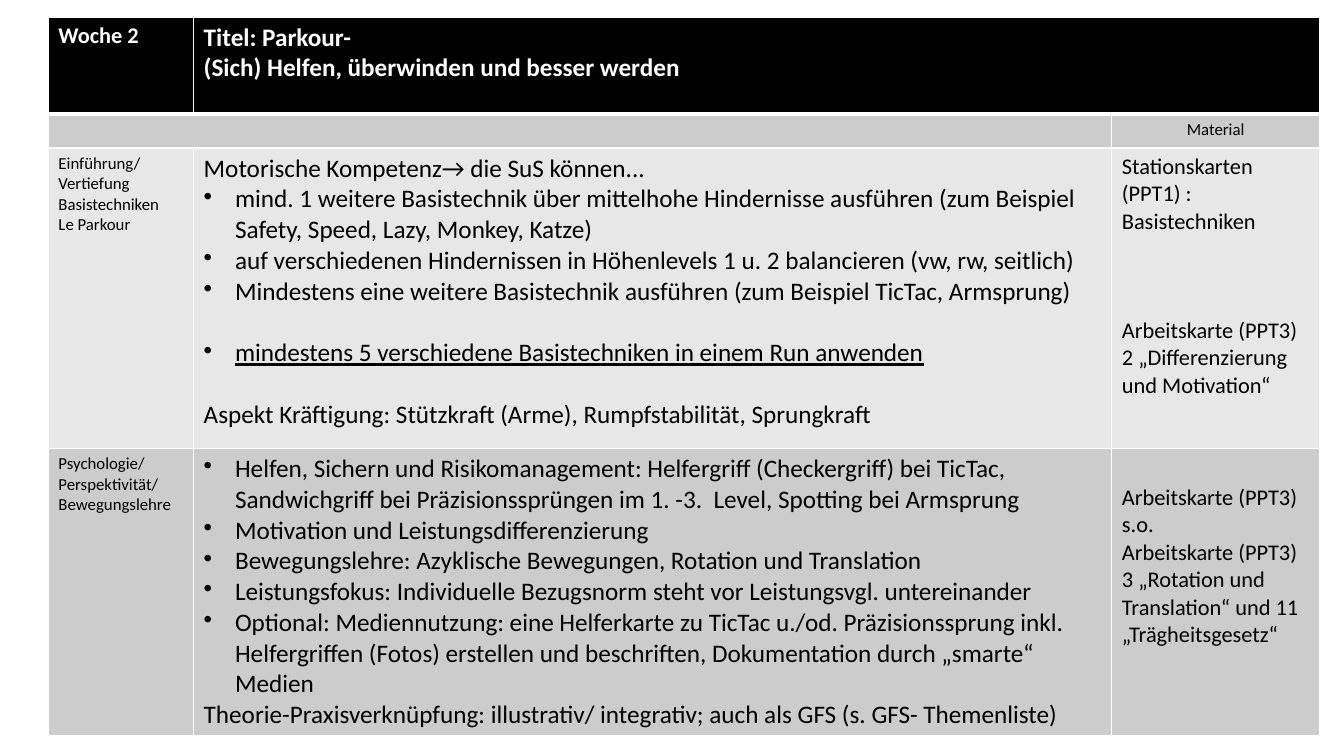
from lxml.etree import SubElement
from pptx import Presentation
from pptx.dml.color import RGBColor
from pptx.enum.text import PP_ALIGN
from pptx.oxml.ns import qn
from pptx.util import Cm, Pt

COLORS = {"black": "000000", "white": "FFFFFF", "dark": "CCCCCC", "light": "E7E7E7"}
FONT = "Calibri"
BULLET_INDENT = Cm(0.79)
COLUMN_WIDTHS = [3.66, 23.14, 5.23]
ROW_HEIGHTS = [2.44, 0.86, 7.57, 7.21]
# Heights of one line of text, in points
LINE_18, LINE_16 = 22, 19.5


class Line:
    """One paragraph of a cell."""

    def __init__(self, text, bullet=False, underline=False, gap=0):
        self.text, self.bullet, self.underline, self.gap = text, bullet, underline, gap


def bullets(*texts):
    return [Line(text, bullet=True) for text in texts]


class PlanSlide:
    def __init__(self, presentation):
        self.slide = presentation.slides.add_slide(presentation.slide_layouts[6])

    def add_table(self, left, top):
        frame = self.slide.shapes.add_table(
            len(ROW_HEIGHTS), len(COLUMN_WIDTHS), Cm(left), Cm(top),
            Cm(sum(COLUMN_WIDTHS)), Cm(sum(ROW_HEIGHTS)))
        self.table = frame.table
        self.table.horz_banding = False
        for column, width in zip(self.table.columns, COLUMN_WIDTHS):
            column.width = Cm(width)
        for row, height in zip(self.table.rows, ROW_HEIGHTS):
            row.height = Cm(height)

    def style_row(self, row, fill):
        for cell in self.table.rows[row].cells:
            cell.fill.solid()
            cell.fill.fore_color.rgb = RGBColor.from_string(COLORS[fill])
            self.add_borders(cell, top=3 if row == 1 else 1, bottom=3 if row == 0 else 1)

    def add_borders(self, cell, top, bottom):
        properties = cell._tc.get_or_add_tcPr()
        sides = [("lnL", 1), ("lnR", 1), ("lnT", top), ("lnB", bottom)]
        for position, (side, width) in enumerate(sides):
            border = SubElement(properties, qn(f"a:{side}"), w=str(Pt(width)))
            SubElement(SubElement(border, qn("a:solidFill")), qn("a:srgbClr"),
                       val=COLORS["white"])
            properties.insert(position, border)

    def merge(self, row, first, last):
        self.table.cell(row, first).merge(self.table.cell(row, last))

    def fill_cell(self, row, column, lines, size, color="black", bold=False,
                  align=PP_ALIGN.LEFT, margin_top=0.13):
        cell = self.table.cell(row, column)
        cell.margin_top = Cm(margin_top)
        for index, line in enumerate(lines):
            if isinstance(line, str):
                line = Line(line)
            frame = cell.text_frame
            paragraph = frame.add_paragraph() if index else frame.paragraphs[0]
            paragraph.text = line.text
            paragraph.alignment = align
            paragraph.space_before = Pt(line.gap)
            font = paragraph.font
            font.name, font.size, font.bold = FONT, Pt(size), bold
            font.underline = line.underline
            font.color.rgb = RGBColor.from_string(COLORS[color])
            if line.bullet:
                self.add_bullet(paragraph)

    def add_bullet(self, paragraph):
        properties = paragraph._p.get_or_add_pPr()
        properties.set("marL", str(BULLET_INDENT))
        properties.set("indent", str(-BULLET_INDENT))
        bullet = SubElement(properties, qn("a:buChar"), char="•")
        properties.find(qn("a:defRPr")).addprevious(bullet)


def main():
    presentation = Presentation()
    presentation.slide_width, presentation.slide_height = Cm(33.87), Cm(19.05)
    plan = PlanSlide(presentation)

    # Table grid
    plan.add_table(1.22, 0.43)
    for row, fill in enumerate(["black", "dark", "light", "dark"]):
        plan.style_row(row, fill)
    plan.merge(0, 1, 2)
    plan.merge(1, 0, 1)

    # Week and title
    plan.fill_cell(0, 0, ["Woche 2"], 16, "white", bold=True)
    plan.fill_cell(0, 1, ["Titel: Parkour-", "(Sich) Helfen, überwinden und besser werden"],
                   18, "white", bold=True)

    # Subheading row, with its empty cells kept low
    for column in (0, 1):
        empty_cell = plan.table.cell(1, column)
        empty_cell.margin_top = empty_cell.margin_bottom = 0
    plan.fill_cell(1, 2, ["Material"], 12, align=PP_ALIGN.CENTER)

    # Basic techniques
    plan.fill_cell(2, 0, ["Einführung/Vertiefung Basistechniken", "Le Parkour"], 12)
    plan.fill_cell(2, 1, [
        "Motorische Kompetenz→ die SuS können...",
        *bullets(
            "mind. 1 weitere Basistechnik über mittelhohe Hindernisse ausführen "
            "(zum Beispiel Safety, Speed, Lazy, Monkey, Katze)",
            "auf verschiedenen Hindernissen in Höhenlevels 1 u. 2 balancieren "
            "(vw, rw, seitlich)",
            "Mindestens eine weitere Basistechnik ausführen "
            "(zum Beispiel TicTac, Armsprung)"),
        Line("mindestens 5 verschiedene Basistechniken in einem Run anwenden",
             bullet=True, underline=True, gap=LINE_18),
        Line("Aspekt Kräftigung: Stützkraft (Arme), Rumpfstabilität, Sprungkraft",
             gap=LINE_18),
    ], 18)
    plan.fill_cell(2, 2, [
        "Stationskarten (PPT1) : Basistechniken",
        Line("Arbeitskarte (PPT3)", gap=3 * LINE_16),
        "2 „Differenzierung und Motivation“",
    ], 16)

    # Psychology and movement theory
    plan.fill_cell(3, 0, ["Psychologie/", "Perspektivität/ Bewegungslehre"], 12)
    plan.fill_cell(3, 1, [
        *bullets(
            "Helfen, Sichern und Risikomanagement: Helfergriff (Checkergriff) bei TicTac, "
            "Sandwichgriff bei Präzisionssprüngen im 1. -3.  Level, Spotting bei Armsprung",
            "Motivation und Leistungsdifferenzierung",
            "Bewegungslehre: Azyklische Bewegungen, Rotation und Translation",
            "Leistungsfokus: Individuelle Bezugsnorm steht vor Leistungsvgl. untereinander",
            "Optional: Mediennutzung: eine Helferkarte zu TicTac u./od. Präzisionssprung "
            "inkl. Helfergriffen (Fotos) erstellen und beschriften, Dokumentation durch "
            "„smarte“ Medien"),
        "Theorie-Praxisverknüpfung: illustrativ/ integrativ; auch als GFS "
        "(s. GFS- Themenliste)",
    ], 18)
    plan.fill_cell(3, 2, [
        "Arbeitskarte (PPT3)", "s.o.", "Arbeitskarte (PPT3)",
        "3 „Rotation und Translation“ und 11 „Trägheitsgesetz“",
    ], 16, margin_top=0.9)

    presentation.save("out.pptx")


if __name__ == "__main__":
    main()
